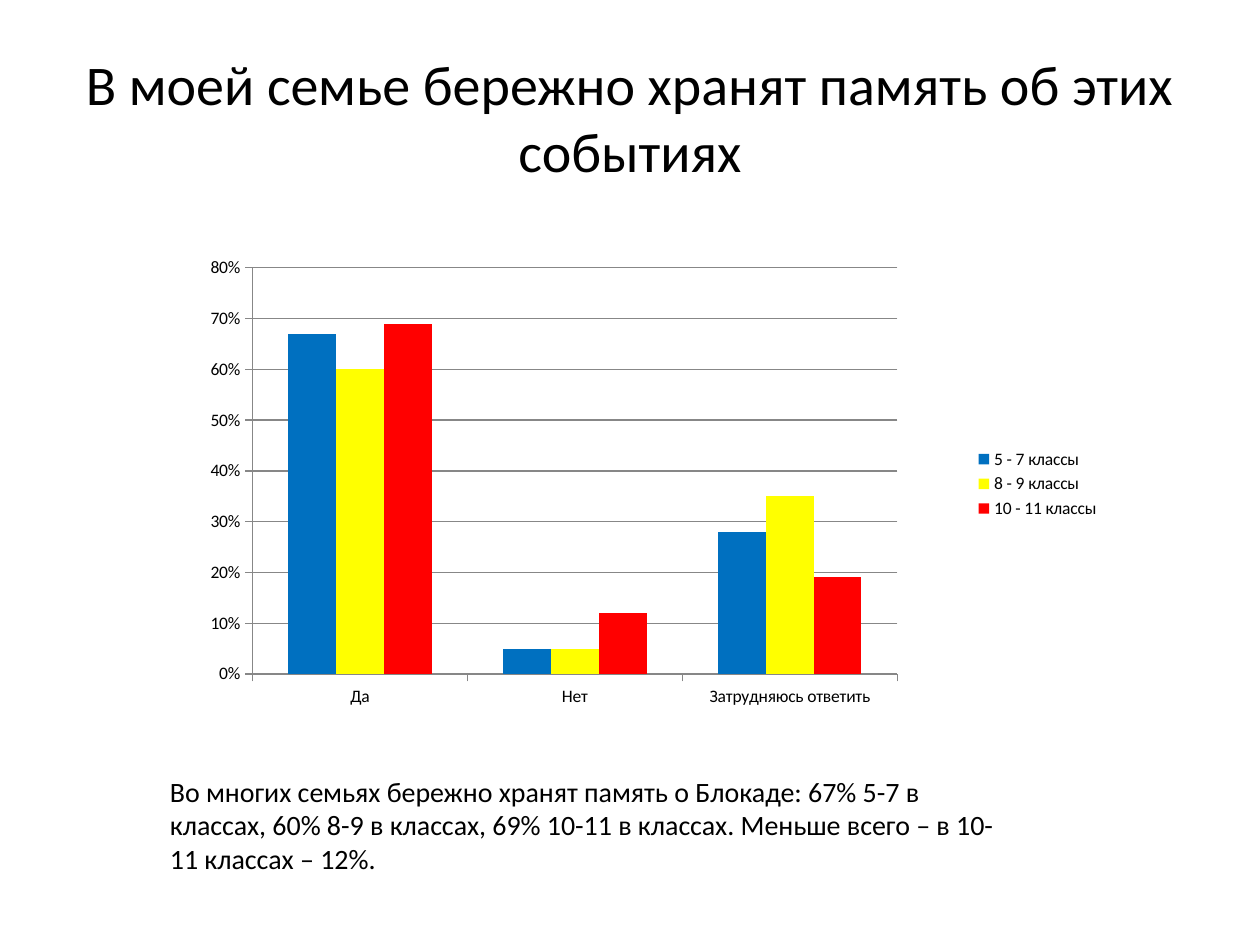
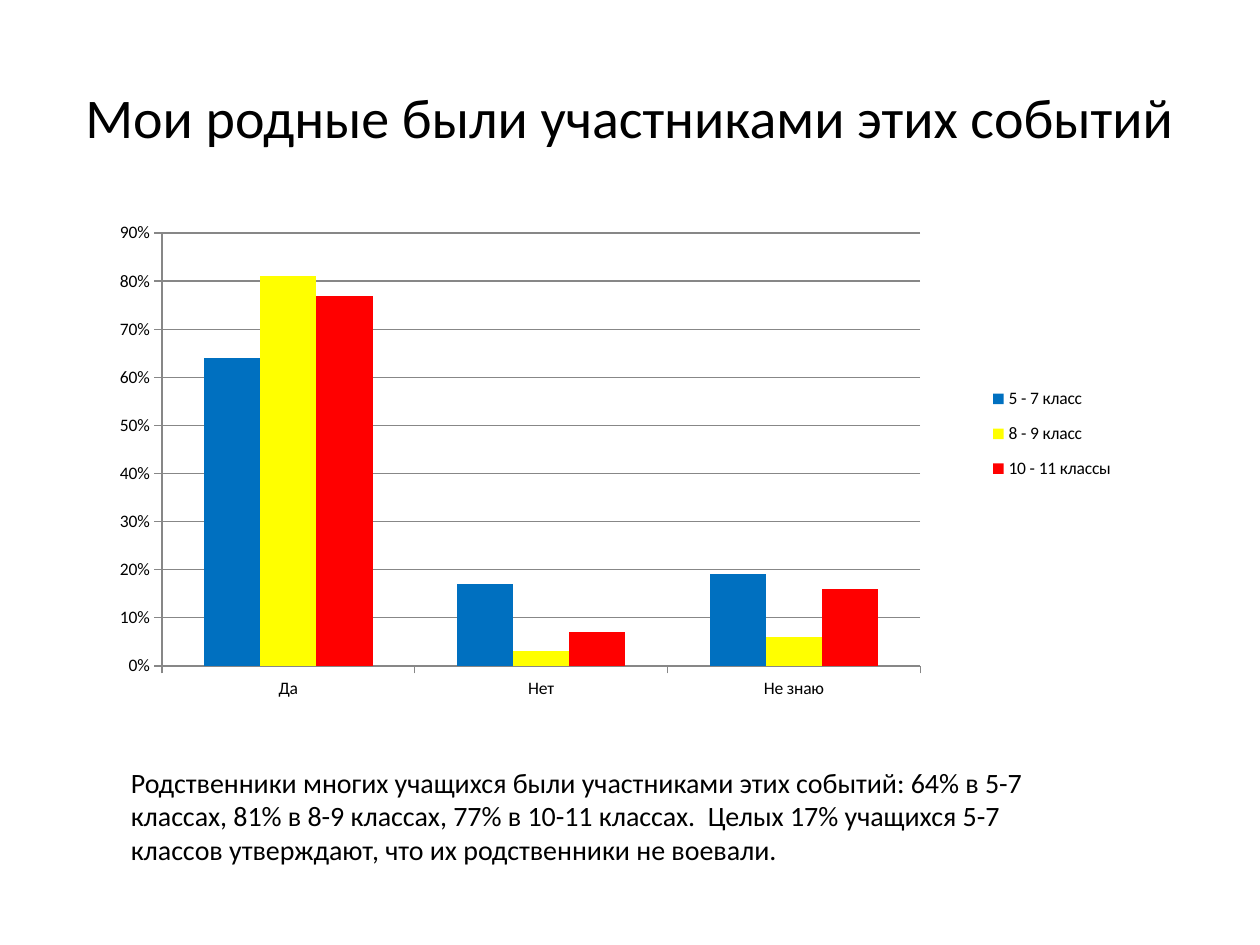
"""Build two survey slides, each with a title, a column chart and a comment."""
from typing import NamedTuple, Optional

from lxml import etree
from pptx import Presentation
from pptx.chart.data import CategoryChartData
from pptx.dml.color import RGBColor
from pptx.enum.chart import XL_CHART_TYPE, XL_LEGEND_POSITION, XL_TICK_MARK
from pptx.enum.text import MSO_ANCHOR, PP_ALIGN
from pptx.oxml.ns import qn
from pptx.util import Pt

COLUMNS = XL_CHART_TYPE.COLUMN_CLUSTERED
RIGHT = XL_LEGEND_POSITION.RIGHT
OUTSIDE, NO_TICK = XL_TICK_MARK.OUTSIDE, XL_TICK_MARK.NONE
MIDDLE = MSO_ANCHOR.MIDDLE
LEFT, CENTER = PP_ALIGN.LEFT, PP_ALIGN.CENTER

FONT = "Calibri"
COLORS = {"background": "FFFFFF", "text": "000000", "axis": "878787"}
SERIES_COLORS = {"5-7": "0070C0", "8-9": "FFFF00", "10-11": "FF0000"}


class Box(NamedTuple):
    left: float
    top: float
    width: float
    height: float


class Survey(NamedTuple):
    title: str
    chart_box: Box
    plot_area: Box
    legend_area: Optional[Box]
    answers: list[str]
    shares: dict[str, list[float]]
    comment_box: Box
    comment: str


TITLE_BOX = Box(36, 21.6, 648, 90)
SURVEYS = [
    Survey(
        "В моей семье бережно хранят память об этих событиях",
        Box(101.5, 129.6, 534.2, 293.8),
        Box(0.08, 0.08, 0.69, 0.79),
        None,
        ["Да", "Нет", "Затрудняюсь ответить"],
        {
            "5 - 7 классы": [0.67, 0.05, 0.28],
            "8 - 9 классы": [0.60, 0.05, 0.35],
            "10 - 11 классы": [0.69, 0.12, 0.19],
        },
        Box(90, 438.5, 500.4, 65.5),
        "Во многих семьях бережно хранят память о Блокаде: 67% 5-7 в классах, "
        "60% 8-9 в классах, 69% 10-11 в классах. Меньше всего – в 10-11 классах – 12%.",
    ),
    Survey(
        "Мои родные были участниками этих событий",
        Box(50.4, 112.3, 601.9, 298.1),
        Box(0.07, 0.07, 0.72, 0.83),
        Box(0.84, 0.34, 0.15, 0.23),
        ["Да", "Нет", "Не знаю"],
        {
            "5 - 7 класс": [0.64, 0.17, 0.19],
            "8 - 9 класс": [0.81, 0.03, 0.06],
            "10 - 11 классы": [0.77, 0.07, 0.16],
        },
        Box(67.7, 433.4, 556.6, 65.5),
        "Родственники многих учащихся были участниками этих событий: 64% в 5-7 классах, "
        "81% в 8-9 классах, 77% в 10-11 классах.  Целых 17% учащихся 5-7 классов "
        "утверждают, что их родственники не воевали.",
    ),
]


def rgb(name: str) -> RGBColor:
    """Return the named colour."""
    return RGBColor.from_string(COLORS[name])


def points(box: Box) -> list[Pt]:
    """Convert a box to lengths."""
    return [Pt(v) for v in box]


def style_font(font, size: float) -> None:
    """Apply the shared typeface and colour."""
    font.name, font.size = FONT, Pt(size)
    font.color.rgb = rgb("text")


def write(sp, text: str, size: float, align) -> None:
    """Fill a shape with one wrapped, vertically centred paragraph."""
    tf = sp.text_frame
    tf.word_wrap, tf.vertical_anchor = True, MIDDLE
    p = tf.paragraphs[0]
    p.text, p.alignment = text, align
    style_font(p.font, size)


def set_layout(parent, area: Box, index: int, inner: bool = False) -> None:
    """Place a chart part by fractions of the chart area."""
    for old in parent.findall(qn("c:layout")):
        parent.remove(old)
    layout = etree.Element(qn("c:layout"))
    manual = etree.SubElement(layout, qn("c:manualLayout"))
    target = [("layoutTarget", "inner")] if inner else []
    modes = [("xMode", "edge"), ("yMode", "edge")]
    for tag, value in target + modes + list(zip("xywh", area)):
        etree.SubElement(manual, qn(f"c:{tag}")).set("val", str(value))
    parent.insert(index, layout)


def style_line(line) -> None:
    """Draw a thin grey chart line."""
    line.color.rgb, line.width = rgb("axis"), Pt(0.75)


def add_survey_chart(s, survey: Survey) -> None:
    """Add the clustered columns with one colour per age group."""
    data = CategoryChartData(number_format="0%")
    data.categories = survey.answers
    for name, values in survey.shares.items():
        data.add_series(name, values)
    chart = s.shapes.add_chart(COLUMNS, *points(survey.chart_box), data).chart
    chart.has_title = False
    style_font(chart.font, 10)

    plot = chart.plots[0]
    plot.gap_width, plot.overlap, plot.vary_by_categories = 150, 0, False
    for series, color in zip(plot.series, SERIES_COLORS.values()):
        series.format.fill.solid()
        series.format.fill.fore_color.rgb = RGBColor.from_string(color)

    for axis in (chart.category_axis, chart.value_axis):
        axis.major_tick_mark, axis.minor_tick_mark = OUTSIDE, NO_TICK
        style_line(axis.format.line)
    axis = chart.value_axis
    axis.has_major_gridlines = True
    style_line(axis.major_gridlines.format.line)
    axis.tick_labels.number_format = "0%"
    axis.tick_labels.number_format_is_linked = False

    chart.has_legend = True
    legend = chart.legend
    legend.position, legend.include_in_layout = RIGHT, False
    chart_xml = chart.element.find(qn("c:chart"))
    set_layout(chart_xml.find(qn("c:plotArea")), survey.plot_area, 0, inner=True)
    if survey.legend_area:
        set_layout(chart_xml.find(qn("c:legend")), survey.legend_area, 1)


def add_survey_slide(prs, survey: Survey) -> None:
    """Add one title, chart and comment slide."""
    s = prs.slides.add_slide(prs.slide_layouts.get_by_name("Title Only"))
    s.background.fill.solid()
    s.background.fill.fore_color.rgb = rgb("background")
    title = s.shapes.title
    title.left, title.top, title.width, title.height = points(TITLE_BOX)
    write(title, survey.title, 32, CENTER)
    add_survey_chart(s, survey)
    write(s.shapes.add_textbox(*points(survey.comment_box)), survey.comment, 16, LEFT)


def main() -> None:
    """Build and save the presentation."""
    prs = Presentation()
    prs.slide_width, prs.slide_height = Pt(720), Pt(540)
    for survey in SURVEYS:
        add_survey_slide(prs, survey)
    prs.save("out.pptx")


if __name__ == "__main__":
    main()
